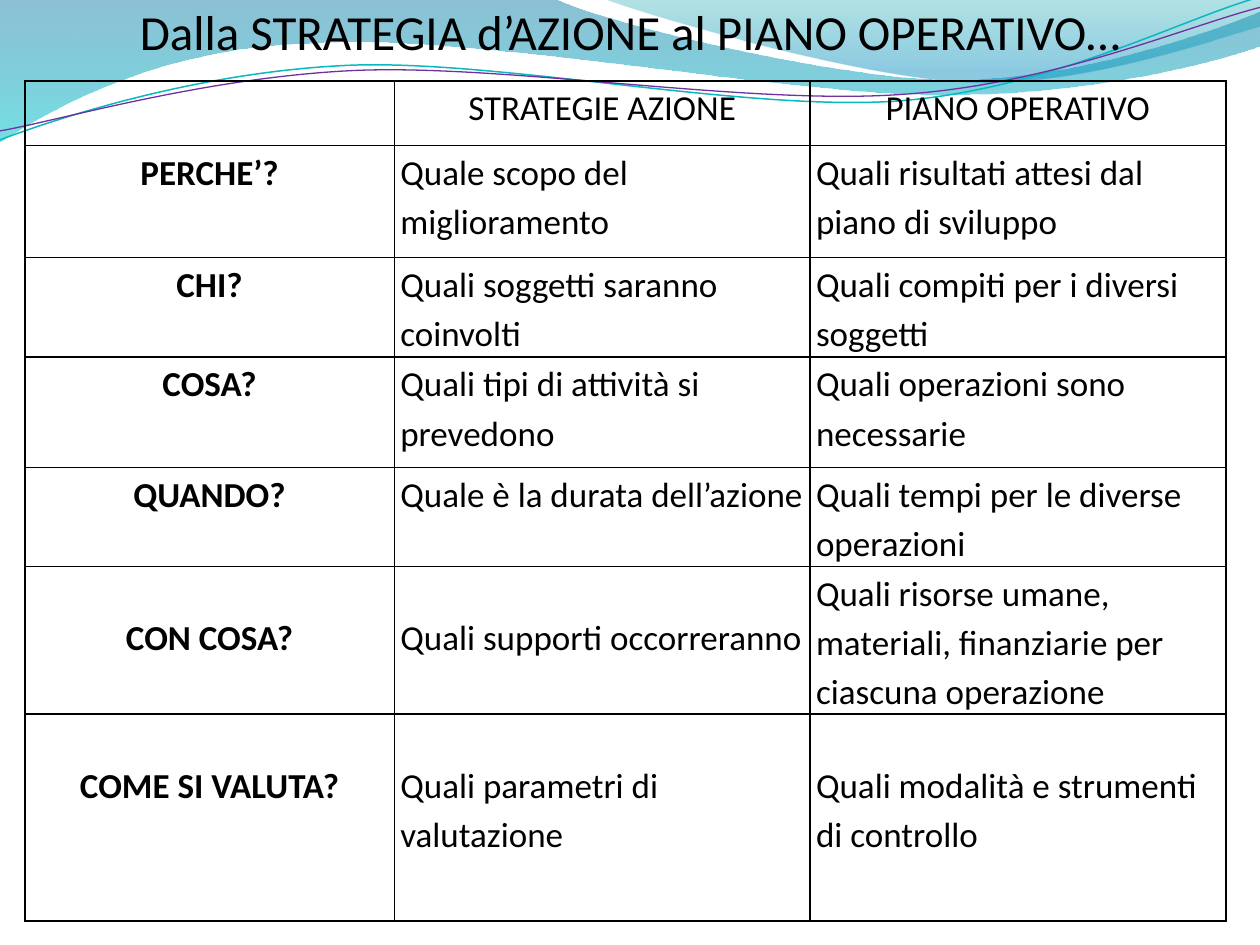
from dataclasses import dataclass

import pptx
import pptx.dml.color
import pptx.enum.text
import pptx.oxml
import pptx.oxml.ns
import pptx.util

Cm = pptx.util.Cm
Pt = pptx.util.Pt
RGBColor = pptx.dml.color.RGBColor
Align = pptx.enum.text.PP_ALIGN
qn = pptx.oxml.ns.qn
Point = tuple[float, float]


@dataclass(frozen=True)
class Theme:
    font: str = "Calibri"
    text: str = "000000"
    title_size: int = 28
    table_size: int = 20
    line_spacing: float = 1.15
    border_width: float = 1


@dataclass(frozen=True)
class Stop:
    position: float
    color: str
    opacity: int


@dataclass(frozen=True)
class Wave:
    start: Point
    segments: tuple[tuple[Point, ...], ...]
    stops: tuple[Stop, ...] = ()
    line_color: str = ""
    line_width: float = 0
    rotation: float = 0


@dataclass(frozen=True)
class Row:
    height: float
    texts: tuple[str, str, str]
    top_margins: tuple[float, float, float] = (0, 0, 0)


THEME = Theme()
LOWERED = 0.89
TILT = 357.3
COLUMN_WIDTHS = (7.45, 8.38, 8.38)

WAVES = (
    Wave(
        (0, 0),
        (
            ((11.18, -0.03),),
            ((12.09, 0.43), (16.87, 1.6), (19.25, 1.6)),
            ((21.67, 1.6), (24.33, 0.66), (25.4, 0.23)),
            ((25.43, 0.91),),
            ((24.97, 1.12), (22.1, 1.93), (18.95, 1.91)),
            ((15.8, 1.91), (9.7, 0.71), (6.53, 0.86)),
            ((3.28, 0.91), (1.17, 2.11), (-0.03, 2.87)),
            ((0, 0),),
        ),
        stops=(Stop(0, "0074A1", 45), Stop(1, "00C6CF", 55)),
    ),
    Wave(
        (12.17, -0.03),
        (
            ((12.93, 0.28), (17.32, 1.57), (19.53, 1.65)),
            ((21.74, 1.75), (24.41, 0.81), (25.4, 0.53)),
            ((25.4, 0),),
            ((12.17, -0.03),),
        ),
        stops=(Stop(0, "00A1A9", 30), Stop(0.8, "008BBF", 45)),
    ),
    Wave(
        (-0.05, 2.22),
        (
            ((1.19, 1.82), (4.02, 1.04), (7.05, 1.05)),
            ((10.05, 1.07), (15.02, 2.37), (18.08, 2.29)),
            ((21.13, 2.2), (23.86, 0.91), (25.41, 0.55)),
        ),
        line_color="0AB8BF",
        line_width=0.85,
        rotation=TILT,
    ),
    Wave(
        (-0.04, 2.04),
        (
            ((1.16, 1.89), (4.17, 1.15), (7.2, 1.16)),
            ((10.25, 1.18), (15.13, 2.25), (18.19, 2.16)),
            ((21.22, 2.1), (23.93, 1.06), (25.45, 0.75)),
        ),
        line_color="7030A0",
        line_width=0.75,
        rotation=TILT,
    ),
)

ROWS = (
    Row(1.3, ("", "STRATEGIE AZIONE", "PIANO OPERATIVO")),
    Row(2.26, ("PERCHE’?", "Quale scopo del miglioramento",
               "Quali risultati attesi dal piano di sviluppo")),
    Row(2.01, ("CHI?", "Quali soggetti saranno coinvolti",
               "Quali compiti per i diversi soggetti")),
    Row(2.23, ("COSA?", "Quali tipi di attività si prevedono",
               "Quali operazioni sono necessarie")),
    Row(1.85, ("QUANDO?", "Quale è la durata dell’azione",
               "Quali tempi per le diverse operazioni")),
    Row(2.98, ("CON COSA?", "Quali supporti occorreranno",
               "Quali risorse umane, materiali, finanziarie per ciascuna operazione"),
        (LOWERED, LOWERED, 0)),
    Row(4.17, ("COME SI VALUTA?", "Quali parametri di valutazione",
               "Quali modalità e strumenti di controllo"),
        (LOWERED, LOWERED, LOWERED)),
)


def set_attributes(target: object, values: dict[str, object]) -> None:
    for name, value in values.items():
        setattr(target, name, value)


def bend_segments(shape: pptx.shapes.autoshape.Shape, wave: Wave) -> None:
    lines = iter(shape._element.findall(".//" + qn("a:lnTo")))
    for segment in wave.segments:
        group = [next(lines) for _ in segment]
        if len(group) == 3:
            curve = pptx.oxml.parse_xml(f'<a:cubicBezTo {pptx.oxml.ns.nsdecls("a")}/>')
            group[0].addprevious(curve)
            for line in group:
                curve.append(line[0])
                line.getparent().remove(line)


def add_wave(slide: pptx.slide.Slide, wave: Wave) -> None:
    builder = slide.shapes.build_freeform(Cm(wave.start[0]), Cm(wave.start[1]))
    builder.add_line_segments([(Cm(x), Cm(y)) for segment in wave.segments for x, y in segment],
                              close=bool(wave.stops))
    shape = builder.convert_to_shape()
    bend_segments(shape, wave)
    shape.shadow.inherit = False
    shape.rotation = wave.rotation
    if not wave.stops:
        shape.fill.background()
        shape.line.color.rgb = RGBColor.from_string(wave.line_color)
        shape.line.width = Pt(wave.line_width)
        return
    shape.line.fill.background()
    shape.fill.gradient()
    shape.fill.gradient_angle = 270
    elements = shape._element.spPr.findall(".//" + qn("a:gs"))
    for gradient_stop, element, stop in zip(shape.fill.gradient_stops, elements, wave.stops):
        gradient_stop.position = stop.position
        gradient_stop.color.rgb = RGBColor.from_string(stop.color)
        element[0].append(pptx.oxml.parse_xml(
            f'<a:alpha {pptx.oxml.ns.nsdecls("a")} val="{stop.opacity * 1000}"/>'))


def write_text(frame: pptx.text.text.TextFrame, text: str, size: int, bold: bool,
               paragraph_format: dict[str, object]) -> None:
    paragraph = frame.paragraphs[0]
    paragraph.text = text
    set_attributes(paragraph, paragraph_format)
    set_attributes(paragraph.font, {"name": THEME.font, "size": Pt(size), "bold": bold})
    paragraph.font.color.rgb = RGBColor.from_string(THEME.text)


def add_borders(cell: pptx.table._Cell) -> None:
    properties = cell._tc.get_or_add_tcPr()
    for index, side in enumerate(("lnL", "lnR", "lnT", "lnB")):
        properties.insert(index, pptx.oxml.parse_xml(
            f'<a:{side} {pptx.oxml.ns.nsdecls("a")} w="{Pt(THEME.border_width)}"><a:solidFill>'
            f'<a:srgbClr val="{THEME.text}"/></a:solidFill></a:{side}>'))


def add_plan_table(slide: pptx.slide.Slide) -> None:
    table = slide.shapes.add_table(
        len(ROWS), len(COLUMN_WIDTHS), Cm(0.5), Cm(1.63), Cm(sum(COLUMN_WIDTHS)), Cm(16.89)).table
    set_attributes(table, {"first_row": False, "horz_banding": False})
    for column, width in zip(table.columns, COLUMN_WIDTHS):
        column.width = Cm(width)
    for row_index, row in enumerate(ROWS):
        table.rows[row_index].height = Cm(row.height)
        for column_index, (text, top) in enumerate(zip(row.texts, row.top_margins)):
            cell = table.cell(row_index, column_index)
            set_attributes(cell, {"margin_left": Cm(0.12), "margin_right": Cm(0.12),
                                  "margin_top": Cm(top), "margin_bottom": Cm(0)})
            cell.fill.background()
            add_borders(cell)
            centred = row_index == 0 or column_index == 0
            if text:
                write_text(cell.text_frame, text, THEME.table_size, column_index == 0,
                           {"alignment": Align.CENTER if centred else Align.LEFT,
                            "line_spacing": THEME.line_spacing})


def add_title(slide: pptx.slide.Slide) -> None:
    frame = slide.shapes.add_textbox(Cm(0), Cm(-0.1), Cm(25.4), Cm(1.45)).text_frame
    set_attributes(frame, {"word_wrap": True,
                           "vertical_anchor": pptx.enum.text.MSO_ANCHOR.MIDDLE,
                           "auto_size": pptx.enum.text.MSO_AUTO_SIZE.SHAPE_TO_FIT_TEXT})
    write_text(frame, "Dalla STRATEGIA d’AZIONE al PIANO OPERATIVO…", THEME.title_size, False,
               {"alignment": Align.CENTER})


def main() -> None:
    presentation = pptx.Presentation()
    set_attributes(presentation, {"slide_width": Cm(25.4), "slide_height": Cm(19.05)})
    slide = presentation.slides.add_slide(presentation.slide_layouts[6])
    for wave in WAVES:
        add_wave(slide, wave)
    add_plan_table(slide)
    add_title(slide)
    presentation.save("out.pptx")


if __name__ == "__main__":
    main()
